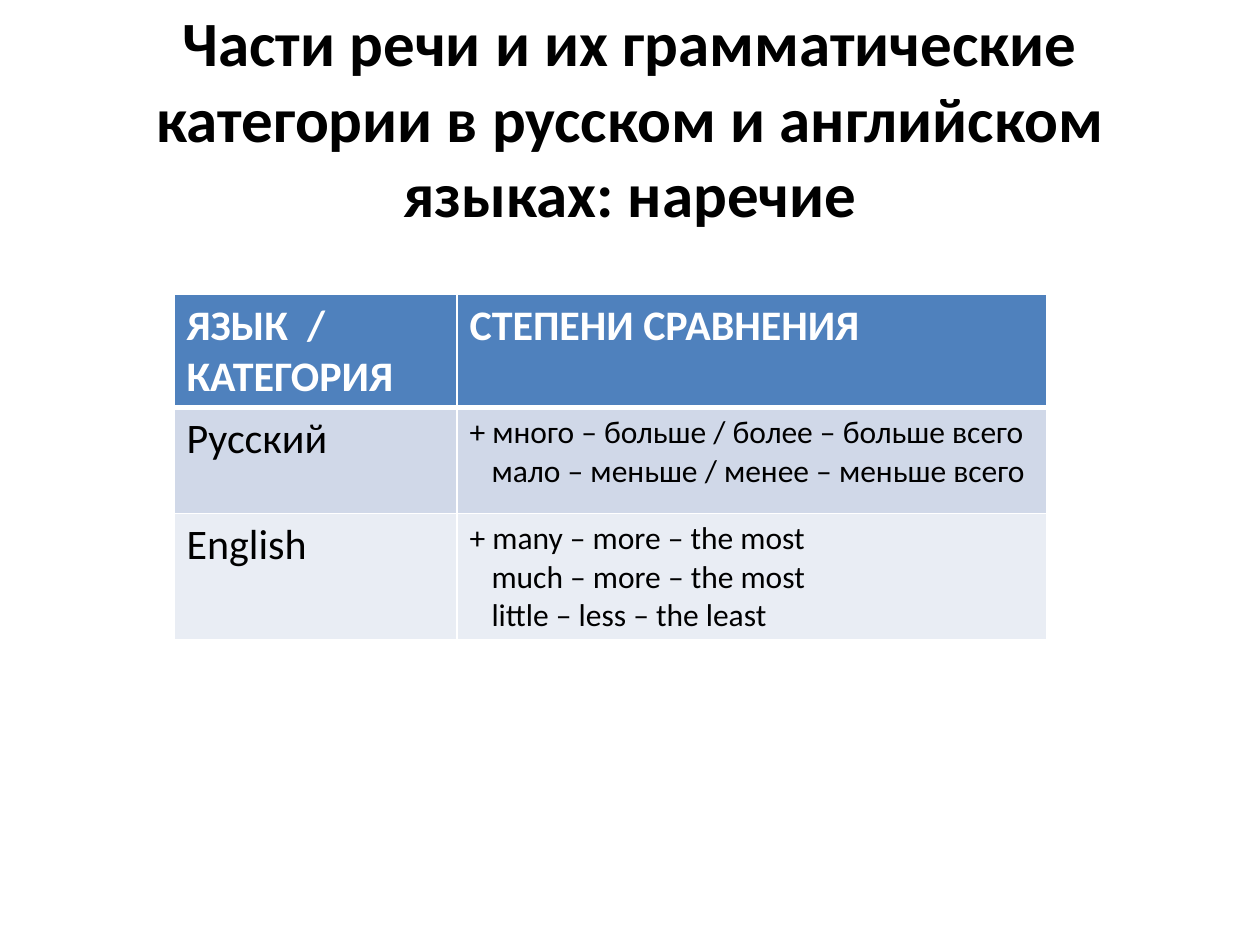
from dataclasses import dataclass

from lxml import etree
from pptx import Presentation
from pptx.dml.color import RGBColor
from pptx.enum.text import MSO_ANCHOR, PP_ALIGN
from pptx.oxml.ns import qn
from pptx.util import Emu, Pt

MIDDLE = MSO_ANCHOR.MIDDLE
CENTER = PP_ALIGN.CENTER
EMU_PER_PX = 914400 / 126
FONT = "Calibri"
BLACK, WHITE = "000000", "FFFFFF"
TITLE = "Части речи и их грамматические категории в русском и английском языках: наречие"
COLUMN_WIDTHS = (283, 590)
ROW_HEIGHT = 106
CONTINUATION_INDENT = 22
THIN, THICK = 1, 3


@dataclass(frozen=True)
class LanguageRow:
    label: str
    lines: tuple[str, ...]
    fill: str
    color: str = BLACK
    bold: bool = False
    detail_size: int = 18
    top_border: int = THIN
    bottom_border: int = THIN


ROWS = (
    LanguageRow("ЯЗЫК  / КАТЕГОРИЯ", ("СТЕПЕНИ СРАВНЕНИЯ",), "4F81BD", WHITE, True, 24,
                bottom_border=THICK),
    LanguageRow("Русский", ("+ много – больше / более – больше всего",
                            "мало – меньше / менее – меньше всего"), "D0D8E8",
                top_border=THICK),
    LanguageRow("English", ("+ many – more – the most", "much – more – the most",
                            "little – less – the least"), "E9EDF4"),
)


def px(length: int) -> Emu:
    """Turn whole pixels into EMU."""
    return Emu(round(length * EMU_PER_PX))


def rgb(value: str) -> RGBColor:
    """Turn a hex string into a colour."""
    return RGBColor.from_string(value)


def style_text(text_frame, size: int, color: str, bold: bool) -> None:
    """Format every run of a text frame."""
    for paragraph in text_frame.paragraphs:
        for run in paragraph.runs:
            run.font.name = FONT
            run.font.size = Pt(size)
            run.font.bold = bold
            run.font.color.rgb = rgb(color)


def add_border(cell, side: str, width: int) -> None:
    """Add a white border to one side of a cell."""
    properties = cell._tc.get_or_add_tcPr()
    line = etree.SubElement(properties, qn(f"a:ln{side}"), w=str(Pt(width)))
    fill = etree.SubElement(line, qn("a:solidFill"))
    etree.SubElement(fill, qn("a:srgbClr"), val=WHITE)


def fill_cell(cell, lines: tuple[str, ...], size: int, row: LanguageRow) -> None:
    """Write and style one cell, indenting its continuation lines."""
    cell.text_frame.text = "\n".join(lines)
    style_text(cell.text_frame, size, row.color, row.bold)
    for paragraph in cell.text_frame.paragraphs[1:]:
        paragraph._p.get_or_add_pPr().set("marL", str(px(CONTINUATION_INDENT)))
    borders = {"L": THIN, "R": THIN, "T": row.top_border, "B": row.bottom_border}
    for side, width in borders.items():
        add_border(cell, side, width)
    cell.fill.solid()
    cell.fill.fore_color.rgb = rgb(row.fill)


def add_title(slide) -> None:
    """Add the centred slide title."""
    shape = slide.shapes.add_textbox(px(63), px(38), px(1134), px(158))
    text_frame = shape.text_frame
    text_frame.word_wrap = True
    text_frame.vertical_anchor = MIDDLE
    text_frame.text = TITLE
    text_frame.paragraphs[0].alignment = CENTER
    style_text(text_frame, 36, BLACK, True)


def add_language_table(slide) -> None:
    """Add the table comparing the two languages."""
    shape = slide.shapes.add_table(
        len(ROWS), len(COLUMN_WIDTHS), px(174), px(294),
        px(sum(COLUMN_WIDTHS)), px(ROW_HEIGHT * len(ROWS)))
    table = shape.table
    for column, width in zip(table.columns, COLUMN_WIDTHS):
        column.width = px(width)
    for index, row in enumerate(ROWS):
        table.rows[index].height = px(ROW_HEIGHT)
        fill_cell(table.cell(index, 0), (row.label,), 24, row)
        fill_cell(table.cell(index, 1), row.lines, row.detail_size, row)


def main() -> None:
    """Build and save the slide."""
    presentation = Presentation()
    presentation.slide_width = px(1260)
    presentation.slide_height = px(945)
    slide = presentation.slides.add_slide(presentation.slide_layouts[6])
    add_title(slide)
    add_language_table(slide)
    presentation.save("out.pptx")


if __name__ == "__main__":
    main()
